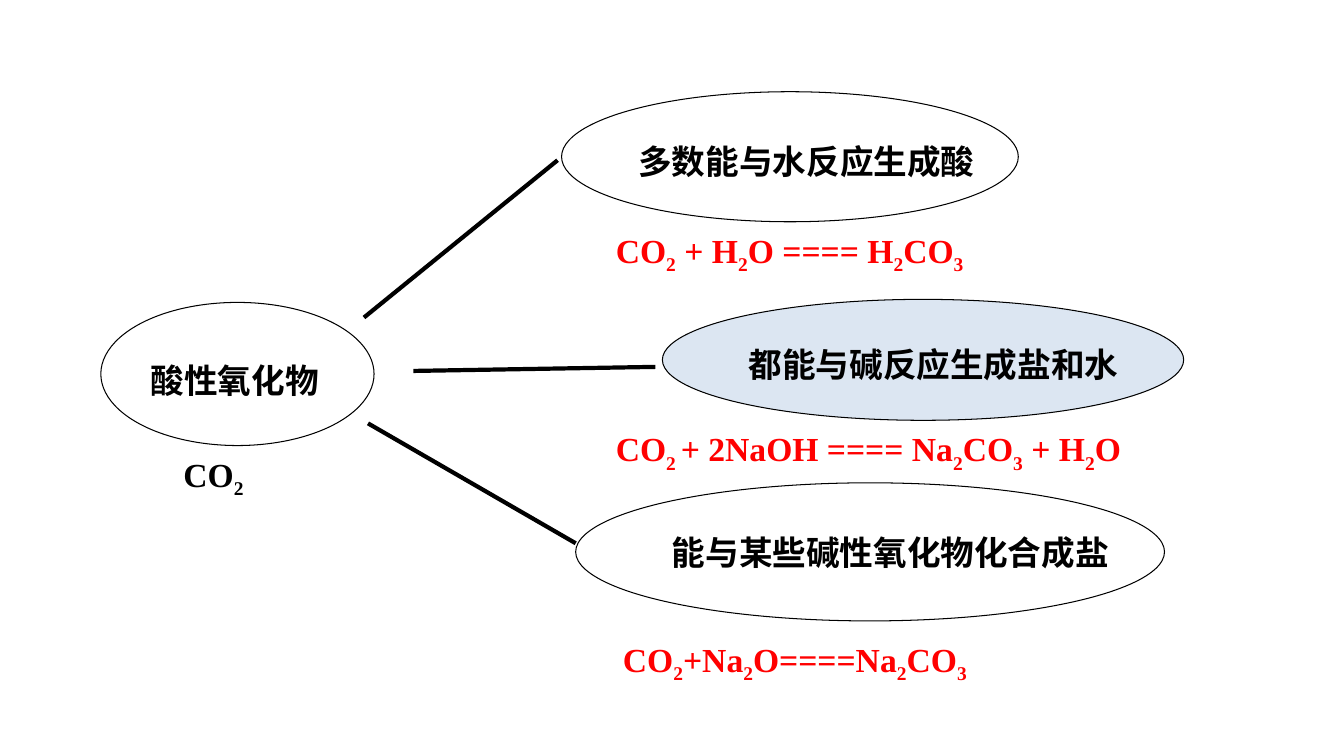
from dataclasses import dataclass

from lxml import etree
from pptx import Presentation
from pptx.dml.color import RGBColor
from pptx.enum.shapes import MSO_CONNECTOR, MSO_SHAPE
from pptx.enum.text import MSO_ANCHOR, MSO_AUTO_SIZE, PP_ALIGN
from pptx.oxml.ns import qn
from pptx.util import Inches, Pt

OVAL = MSO_SHAPE.OVAL
STRAIGHT = MSO_CONNECTOR.STRAIGHT
MIDDLE = MSO_ANCHOR.MIDDLE
GROW = MSO_AUTO_SIZE.SHAPE_TO_FIT_TEXT
LEFT = PP_ALIGN.LEFT


@dataclass(frozen=True)
class Theme:
    ink: RGBColor = RGBColor(0, 0, 0)
    equation: RGBColor = RGBColor(255, 0, 0)
    highlight: RGBColor = RGBColor(0xDC, 0xE6, 0xF2)
    font: str = "Times New Roman"
    alt_font: str = "Calibri"
    text_size: Pt = Pt(24)
    outline: Pt = Pt(0.75)
    branch_line: Pt = Pt(3)


THEME = Theme()

# Boxes are (left, top, width, height) in inches.
# In a formula, every second part between bars is a subscript.
ROOT = {
    "box": (1, 3, 2.71, 1.42), "label": "酸性氧化物", "spacing": 1.3,
    "formula": "CO|2", "offset": (0.72, 1.45), "formula_width": 0.95,
    "color": THEME.ink,
}
BRANCHES = [
    {"box": (5.57, 0.91, 4.53, 1.29), "label": "多数能与水反应生成酸",
     "spacing": 1.2, "formula": "CO|2| + H|2|O ==== H|2|CO|3",
     "offset": (0.44, 1.32), "formula_width": 5.23,
     "line": ((3.61, 3.15), (5.53, 1.59))},
    {"box": (6.57, 2.97, 5.17, 1.2), "label": "都能与碱反应生成盐和水",
     "spacing": 1.2, "fill": THEME.highlight,
     "formula": "CO|2 |+ 2NaOH ==== Na|2|CO|3| + H|2|O",
     "offset": (-0.56, 1.23), "formula_width": 5.44,
     "line": ((4.1, 3.68), (6.5, 3.64))},
    {"box": (5.71, 4.79, 5.84, 1.37), "label": "能与某些碱性氧化物化合成盐",
     "spacing": 1.0, "font": THEME.alt_font,
     "formula": "CO|2|+Na|2|O====Na|2|CO|3",
     "offset": (0.37, 1.5), "formula_width": 4.01,
     "line": ((3.65, 4.2), (5.71, 5.39))},
]


def add_run(paragraph, text, color, font=THEME.font):
    run = paragraph.add_run()
    run.text = text
    for name, value in {"name": font, "size": THEME.text_size, "bold": True}.items():
        setattr(run.font, name, value)
    run.font.color.rgb = color
    return run


def add_oval(slide, box, label, spacing, fill=None, font=THEME.font):
    oval = slide.shapes.add_shape(OVAL, *map(Inches, box))
    oval.shadow.inherit = False
    if fill is None:
        oval.fill.background()
    else:
        oval.fill.solid()
        oval.fill.fore_color.rgb = fill
    oval.line.color.rgb = THEME.ink
    oval.line.width = THEME.outline
    frame = oval.text_frame
    frame.word_wrap = False
    frame.vertical_anchor = MIDDLE
    paragraph = frame.paragraphs[0]
    paragraph.alignment = LEFT
    paragraph.line_spacing = spacing
    add_run(paragraph, label, THEME.ink, font)


def add_formula(slide, left, top, width, formula, color):
    box = slide.shapes.add_textbox(*map(Inches, (left, top, width, 0.5)))
    frame = box.text_frame
    frame.word_wrap = True
    frame.auto_size = GROW
    for index, part in enumerate(formula.split("|")):
        run = add_run(frame.paragraphs[0], part, color)
        if index % 2:
            run.font._element.set("baseline", "-25000")


def add_branch_line(slide, start, end):
    line = slide.shapes.add_connector(STRAIGHT, *map(Inches, start + end))
    line.line.color.rgb = THEME.ink
    line.line.width = THEME.branch_line
    etree.SubElement(line._element.spPr, qn("a:effectLst"))


def add_node(slide, node):
    """Draw an oval with its formula below, offset from the oval's corner."""
    left, top = node["box"][:2]
    dx, dy = node["offset"]
    add_oval(slide, node["box"], node["label"], node["spacing"],
             node.get("fill"), node.get("font", THEME.font))
    add_formula(slide, left + dx, top + dy, node["formula_width"],
                node["formula"], node.get("color", THEME.equation))


def build_oxide_slide(presentation):
    slide = presentation.slides.add_slide(presentation.slide_layouts[6])
    add_node(slide, ROOT)
    for branch in BRANCHES:
        add_branch_line(slide, *branch["line"])
        add_node(slide, branch)


def main():
    presentation = Presentation()
    presentation.slide_width = Inches(13.33)
    presentation.slide_height = Inches(7.5)
    build_oxide_slide(presentation)
    presentation.save("out.pptx")


if __name__ == "__main__":
    main()
